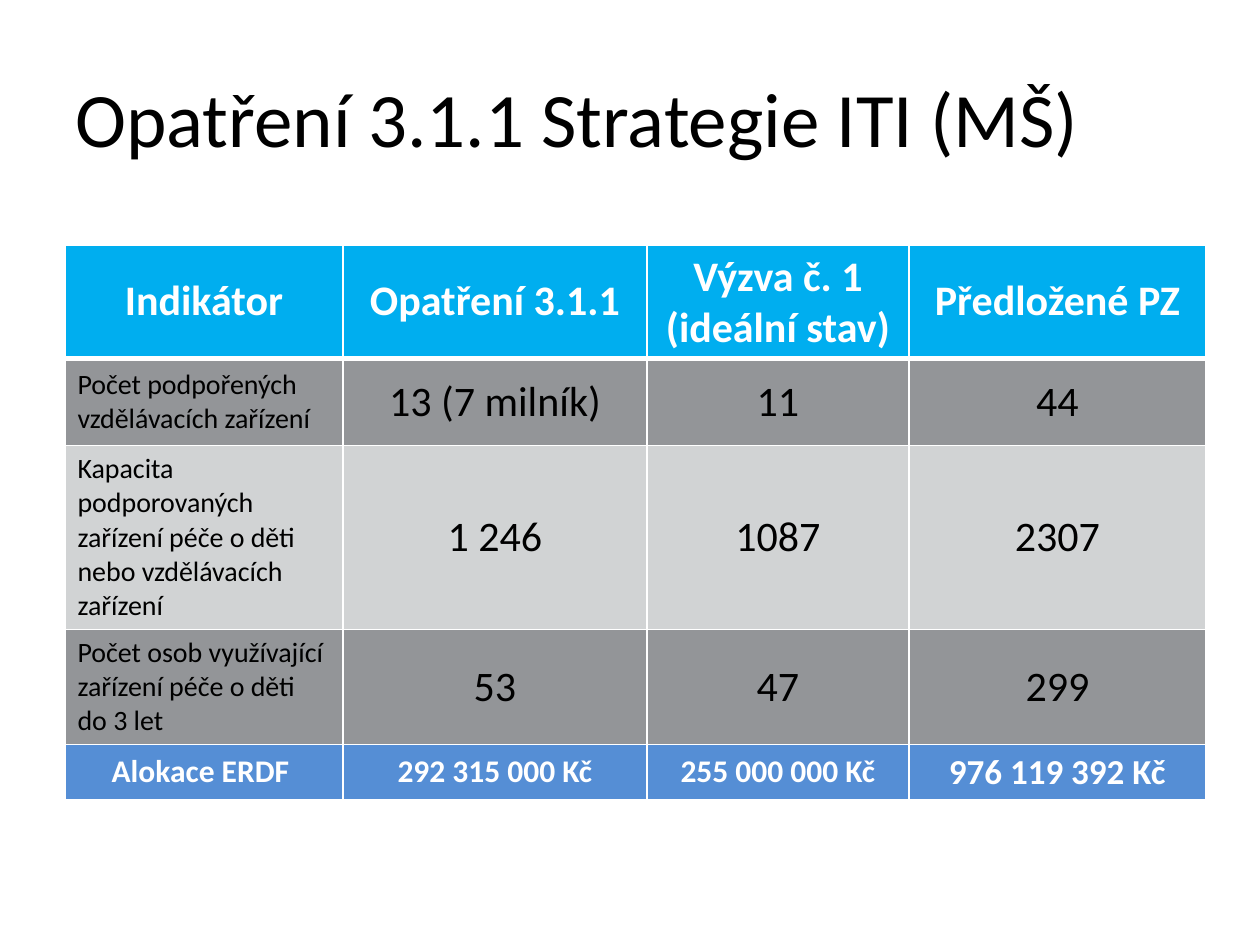
import pptx
import pptx.util
import pptx.dml.color
import pptx.enum.text
import pptx.oxml
import pptx.oxml.ns

RGBColor = pptx.dml.color.RGBColor
ALIGN = pptx.enum.text.PP_ALIGN
MIDDLE = pptx.enum.text.MSO_ANCHOR.MIDDLE

WHITE = RGBColor(0xFF, 0xFF, 0xFF)
BLACK = RGBColor(0x00, 0x00, 0x00)
HEADER_BLUE = RGBColor(0x00, 0xAE, 0xEF)
DARK_GREY = RGBColor(0x93, 0x95, 0x98)
LIGHT_GREY = RGBColor(0xD1, 0xD3, 0xD4)
TOTAL_BLUE = RGBColor(0x55, 0x8E, 0xD5)

COLUMN_WIDTHS = [278, 304, 262, 297]
ROW_HEIGHTS = [113, 87, 184, 115, 55]
HEADER = ["Indikátor", "Opatření 3.1.1", "Výzva č. 1\n(ideální stav)", "Předložené PZ"]
INDICATORS = [
    ["Počet podpořených vzdělávacích zařízení", "13 (7 milník)", "11", "44"],
    ["Kapacita podporovaných zařízení péče o děti nebo vzdělávacích zařízení",
     "1 246", "1087", "2307"],
    ["Počet osob využívající zařízení péče o děti do 3 let", "53", "47", "299"],
]
TOTALS = ["Alokace ERDF ", "292 315 000 Kč", "255 000 000 Kč", "976 119 392 Kč"]
TOTAL_SIZES = [18, 18, 18, 20]


def px(value):
    return pptx.util.Emu(round(value * 914400 / 126))


def write_text(frame, text, *, size, color=BLACK, bold=False, align=ALIGN.CENTER,
               font_name="Calibri"):
    for index, line in enumerate(text.split("\n")):
        paragraph = frame.add_paragraph() if index else frame.paragraphs[0]
        paragraph.alignment = align
        run = paragraph.add_run()
        run.text = line
        run.font.name = font_name
        run.font.size = pptx.util.Pt(size)
        run.font.bold = bold
        run.font.color.rgb = color


class SlideBuilder:
    def __init__(self, presentation):
        self.slide = presentation.slides.add_slide(presentation.slide_layouts[6])
        self.font_name = "Calibri"

    def text_box(self, left, top, width, height, text, **text_format):
        shape = self.slide.shapes.add_textbox(px(left), px(top), px(width), px(height))
        shape.text_frame.word_wrap = True
        shape.text_frame.vertical_anchor = MIDDLE
        write_text(shape.text_frame, text, font_name=self.font_name, **text_format)

    def table(self, left, top, column_widths, row_heights):
        table = self.slide.shapes.add_table(
            len(row_heights), len(column_widths), px(left), px(top),
            px(sum(column_widths)), px(sum(row_heights))).table
        for column, width in zip(table.columns, column_widths):
            column.width = px(width)
        for row, height in zip(table.rows, row_heights):
            row.height = px(height)
        return table

    def cell(self, cell, text, fill, *, top_line=1, bottom_line=1, inset=True,
             **text_format):
        cell.vertical_anchor = MIDDLE
        if not inset:
            cell.margin_left = cell.margin_right = 0
            cell.margin_top = cell.margin_bottom = 0
        write_text(cell.text_frame, text, font_name=self.font_name, **text_format)
        self.borders(cell, {"L": 1, "R": 1, "T": top_line, "B": bottom_line})
        cell.fill.solid()
        cell.fill.fore_color.rgb = fill

    def borders(self, cell, line_widths):
        properties = cell._tc.get_or_add_tcPr()
        for side, width in line_widths.items():
            properties.append(pptx.oxml.parse_xml(
                f'<a:ln{side} {pptx.oxml.ns.nsdecls("a")} w="{pptx.util.Pt(width)}">'
                f'<a:solidFill><a:srgbClr val="{WHITE}"/></a:solidFill></a:ln{side}>'))


def main():
    presentation = pptx.Presentation()
    presentation.slide_width = px(1260)
    presentation.slide_height = px(945)
    builder = SlideBuilder(presentation)
    builder.text_box(63, 38, 1134, 157, "Opatření 3.1.1 Strategie ITI (MŠ)",
                     size=44, align=ALIGN.LEFT)

    table = builder.table(65, 245, COLUMN_WIDTHS, ROW_HEIGHTS)
    for column, text in enumerate(HEADER):
        builder.cell(table.cell(0, column), text, HEADER_BLUE, bottom_line=3,
                     size=24, color=WHITE, bold=True)
    for row, values in enumerate(INDICATORS, start=1):
        fill = DARK_GREY if row % 2 else LIGHT_GREY
        for column, text in enumerate(values):
            is_label = column == 0
            builder.cell(table.cell(row, column), text, fill,
                         top_line=3 if row == 1 else 1, inset=column < 2,
                         size=16 if is_label else 24,
                         align=ALIGN.LEFT if is_label else ALIGN.CENTER)
    for column, (text, size) in enumerate(zip(TOTALS, TOTAL_SIZES)):
        builder.cell(table.cell(len(ROW_HEIGHTS) - 1, column), text, TOTAL_BLUE,
                     size=size, color=WHITE, bold=True)
    presentation.save("out.pptx")


if __name__ == "__main__":
    main()
